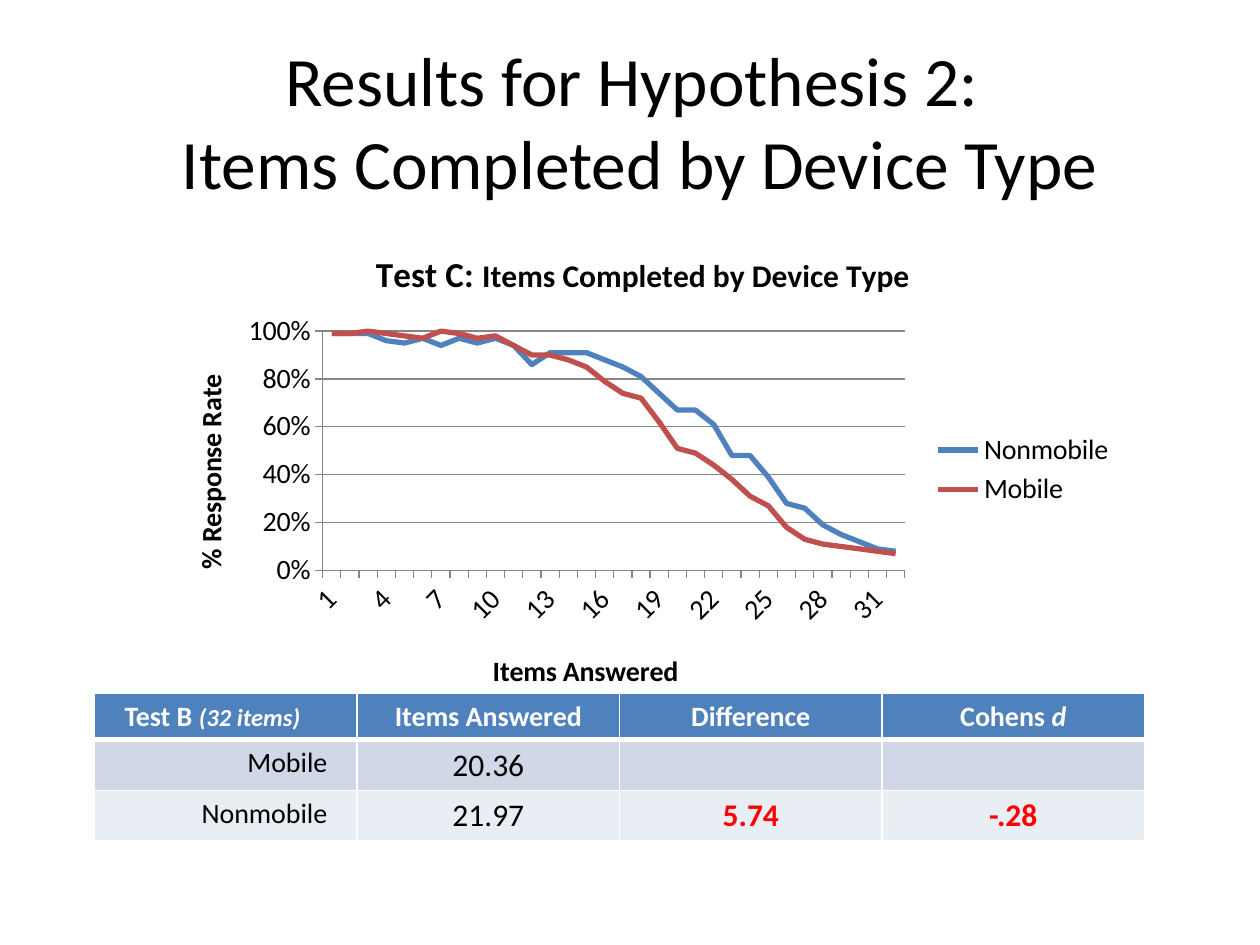
from lxml.etree import SubElement
from pptx import Presentation
from pptx.chart.data import CategoryChartData
from pptx.dml.color import RGBColor
from pptx.enum.chart import XL_CHART_TYPE as ChartType, XL_LEGEND_POSITION as LegendPosition, XL_TICK_MARK as TickMark
from pptx.enum.text import MSO_ANCHOR as Anchor, PP_ALIGN as Align
from pptx.oxml import parse_xml
from pptx.oxml.ns import nsdecls, qn
from pptx.util import Cm, Pt

COLORS = {
    "black": "000000", "white": "FFFFFF", "red": "FF0000", "grid": "868686",
    "blue": "4F81BD", "brick": "C0504D", "band_dark": "D0D8E8", "band_light": "E9EDF4",
}


def style_font(font, size, color="black", bold=False, italic=False):
    values = {"name": "Calibri", "size": Pt(size), "bold": bold, "italic": italic}
    for name, value in values.items():
        setattr(font, name, value)
    font.color.rgb = RGBColor.from_string(COLORS[color])


def place_manually(parent, **values):
    layout = parent.find(qn("c:layout"))
    if layout is None:
        layout = parse_xml(f"<c:layout {nsdecls('c')}/>")
        text = parent.find(qn("c:tx"))
        parent.insert(0 if text is None else parent.index(text) + 1, layout)
    manual = SubElement(layout, qn("c:manualLayout"))
    for tag, value in values.items():
        SubElement(manual, qn(f"c:{tag}")).set("val", str(value))


deck = Presentation()
deck.slide_width, deck.slide_height = Cm(25.4), Cm(19.05)
page = deck.slides.add_slide(deck.slide_layouts[6])

title_box = page.shapes.add_textbox(Cm(1.47), Cm(0.84), Cm(22.86), Cm(3.18))
frame = title_box.text_frame
frame.word_wrap = True
frame.vertical_anchor = Anchor.MIDDLE
para = frame.paragraphs[0]
para.alignment = Align.CENTER
for index, line in enumerate(["Results for Hypothesis 2: ", "Items Completed by Device Type"]):
    if index:
        para.add_line_break()
    span = para.add_run()
    span.text = line
    style_font(span.font, 39.6)

header = [
    [("Test B ", 16, False), ("(32 items)", 14, True)],
    [("Items Answered", 16, False)],
    [("Difference", 16, False)],
    [("Cohens ", 16, False), ("d", 16, True)],
]
body = [["Mobile", "20.36", "", ""], ["Nonmobile", "21.97", "5.74", "-.28"]]
table_rows = [[[(text, size, "white", True, italic) for text, size, italic in cell] for cell in header]]
for row in body:
    table_rows.append([
        [(text, 18 if column else 16, "red" if column > 1 else "black", column > 1, False)]
        for column, text in enumerate(row)
    ])
row_fills = ["blue", "band_dark", "band_light"]

table = page.shapes.add_table(3, 4, Cm(1.91), Cm(13.97), Cm(21.16), Cm(2.98)).table
for row, height in zip(table.rows, [0.94, 1.02, 1.02]):
    row.height = Cm(height)
for row_index, cells in enumerate(table_rows):
    for column, spans in enumerate(cells):
        cell = table.cell(row_index, column)
        cell.margin_left = cell.margin_right = Cm(0.6)
        cell.margin_top = cell.margin_bottom = Cm(0.13)
        for side in "LRTB":
            heavy = (row_index, side) in [(0, "B"), (1, "T")]
            cell._tc.get_or_add_tcPr().append(parse_xml(
                f'<a:ln{side} {nsdecls("a")} w="{Pt(3 if heavy else 1)}"><a:solidFill>'
                f'<a:srgbClr val="{COLORS["white"]}"/></a:solidFill></a:ln{side}>'
            ))
        cell.fill.solid()
        cell.fill.fore_color.rgb = RGBColor.from_string(COLORS[row_fills[row_index]])
        para = cell.text_frame.paragraphs[0]
        first = Align.RIGHT if row_index else Align.LEFT
        para.alignment = Align.CENTER if column else first
        for text, *style in spans:
            if text:
                span = para.add_run()
                span.text = text
                style_font(span.font, *style)

series_data = {
    "Nonmobile": [
        0.99, 0.99, 0.99, 0.96, 0.95, 0.97, 0.94, 0.97, 0.95, 0.97, 0.94, 0.86, 0.91, 0.91, 0.91, 0.88,
        0.85, 0.81, 0.74, 0.67, 0.67, 0.61, 0.48, 0.48, 0.39, 0.28, 0.26, 0.19, 0.15, 0.12, 0.09, 0.08,
    ],
    "Mobile": [
        0.99, 0.99, 1, 0.99, 0.98, 0.97, 1, 0.99, 0.97, 0.98, 0.94, 0.9, 0.9, 0.88, 0.85, 0.79,
        0.74, 0.72, 0.62, 0.51, 0.49, 0.44, 0.38, 0.31, 0.27, 0.18, 0.13, 0.11, 0.1, 0.09, 0.08, 0.07,
    ],
}
data = CategoryChartData(number_format="0%")
data.categories = [str(item) for item in range(1, 33)]
for name, values in series_data.items():
    data.add_series(name, values)
chart = page.shapes.add_chart(ChartType.LINE, Cm(3.18), Cm(4.65), Cm(19.56), Cm(9.65), data).chart
style_font(chart.font, 10)
place_manually(
    chart._chartSpace.chart.plotArea,
    layoutTarget="inner", xMode="edge", yMode="edge", x=0.17, y=0.21, w=0.6, h=0.5,
)

chart.has_title = True
para = chart.chart_title.text_frame.paragraphs[0]
for text, size in [("Test C: ", 20), ("Items Completed by Device Type", 18)]:
    span = para.add_run()
    span.text = text
    style_font(span.font, size, bold=True)

chart.has_legend = True
chart.legend.position = LegendPosition.RIGHT
chart.legend.include_in_layout = False
style_font(chart.legend.font, 16)

chart.plots[0].vary_by_categories = False
for series, color in zip(chart.plots[0].series, ["blue", "brick"]):
    series.smooth = False
    series.format.line.width = Pt(3)
    series.format.line.color.rgb = RGBColor.from_string(COLORS[color])

category_axis, value_axis = chart.category_axis, chart.value_axis
axes = [
    (category_axis, "Items Answered", 0, 0.34, 0.87),
    (value_axis, "% Response Rate", -5400000, 0.03, 0.29),
]
for axis, text, rotation, left, top in axes:
    axis.major_tick_mark = TickMark.OUTSIDE
    axis.minor_tick_mark = TickMark.NONE
    style_font(axis.tick_labels.font, 16)
    axis.format.line.color.rgb = RGBColor.from_string(COLORS["grid"])
    axis.has_title = True
    frame = axis.axis_title.text_frame
    span = frame.paragraphs[0].add_run()
    span.text = text
    style_font(span.font, 16, bold=True)
    frame._txBody.bodyPr.set("rot", str(rotation))
    frame._txBody.bodyPr.set("vert", "horz")
    place_manually(axis.axis_title._element, xMode="edge", yMode="edge", x=left, y=top)

category_axis._element.txPr.bodyPr.set("rot", "-2700000")
label_skip = parse_xml(f'<c:tickLblSkip {nsdecls("c")} val="3"/>')
category_axis._element.find(qn("c:noMultiLvlLbl")).addprevious(label_skip)
scale = {"minimum_scale": 0, "maximum_scale": 1, "major_unit": 0.2, "has_major_gridlines": True}
for name, value in scale.items():
    setattr(value_axis, name, value)
value_axis.tick_labels.number_format = "0%"
value_axis.tick_labels.number_format_is_linked = False
value_axis.major_gridlines.format.line.color.rgb = RGBColor.from_string(COLORS["grid"])

deck.save("out.pptx")
